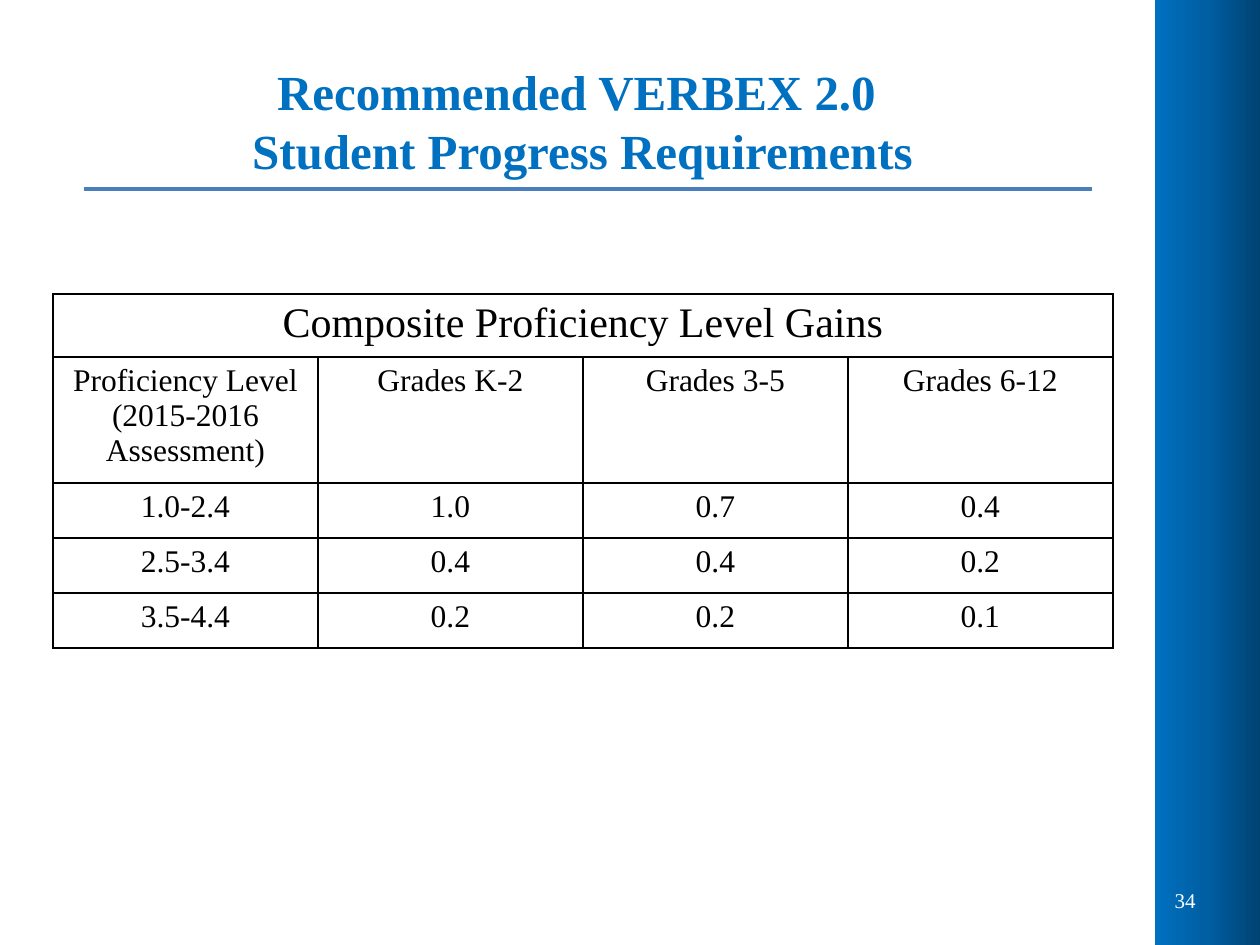
import copy

import pptx
import pptx.dml.color
import pptx.enum.shapes
import pptx.enum.text
import pptx.oxml
import pptx.oxml.ns
import pptx.util

PX = 914400 // 126  # EMU in one px
FONT = "Times New Roman"
BLUE = pptx.dml.color.RGBColor(0x00, 0x70, 0xC0)
MID_BLUE = pptx.dml.color.RGBColor(0x00, 0x5E, 0xA2)
DARK_BLUE = pptx.dml.color.RGBColor(0x00, 0x42, 0x72)
RULE_BLUE = pptx.dml.color.RGBColor(0x4B, 0x7E, 0xBC)
BLACK = pptx.dml.color.RGBColor(0, 0, 0)
WHITE = pptx.dml.color.RGBColor(255, 255, 255)
ALIGN = pptx.enum.text.PP_ALIGN
MIDDLE = pptx.enum.text.MSO_ANCHOR.MIDDLE

GAINS_TITLE = "Composite Proficiency Level Gains"
GAINS = [
    ["Proficiency Level (2015-2016 Assessment)", "Grades K-2", "Grades 3-5", "Grades 6-12"],
    ["1.0-2.4", "1.0", "0.7", "0.4"],
    ["2.5-3.4", "0.4", "0.4", "0.2"],
    ["3.5-4.4", "0.2", "0.2", "0.1"],
]
COLUMN_WIDTH = 265
ROW_HEIGHTS = [63, 126, 55, 55, 55]


def px(*lengths):
    return [pptx.util.Emu(length * PX) for length in lengths]


def add_run(paragraph, text, size, color, align, bold=False):
    paragraph.alignment = align
    run = paragraph.add_run()
    run.text = text
    run.font.name = FONT
    run.font.size = pptx.util.Pt(size)
    run.font.bold = bold
    run.font.color.rgb = color


def add_side_band(slide):
    band = slide.shapes.add_shape(
        pptx.enum.shapes.MSO_SHAPE.RECTANGLE, *px(1155, 0, 105, 945))
    band.shadow.inherit = False
    band.line.fill.background()
    band.fill.gradient()
    band.fill.gradient_angle = 0
    # The default gradient has two stops; a third goes between them
    stop_list = band.element.find(".//" + pptx.oxml.ns.qn("a:gsLst"))
    middle_stop = copy.deepcopy(stop_list[0])
    middle_stop.set("pos", "50000")
    stop_list.insert(1, middle_stop)
    for stop, color in zip(band.fill.gradient_stops, (BLUE, MID_BLUE, DARK_BLUE)):
        stop.color.rgb = color


def set_title(slide, lines):
    title = slide.shapes.title
    title.left, title.top, title.width, title.height = px(63, 42, 1039, 157)
    title.text_frame.vertical_anchor = MIDDLE
    heading = title.text_frame.paragraphs[0]
    for index, line in enumerate(lines):
        if index:
            heading.add_line_break()
        add_run(heading, line, 28, BLUE, ALIGN.CENTER, bold=True)


def add_page_number(slide, number):
    box = slide.shapes.add_textbox(*px(1155, 876, 53, 48))
    box.text_frame.word_wrap = True
    box.text_frame.vertical_anchor = MIDDLE
    add_run(box.text_frame.paragraphs[0], number, 12, WHITE, ALIGN.RIGHT)


def add_title_rule(slide):
    rule = slide.shapes.add_connector(
        pptx.enum.shapes.MSO_CONNECTOR.STRAIGHT, *px(84, 189, 1092, 189))
    rule.line.color.rgb = RULE_BLUE
    rule.line.width = pptx.util.Pt(2)
    rule.element.spPr.append(pptx.oxml.parse_xml(
        f'<a:effectLst {pptx.oxml.ns.nsdecls("a")}/>'))


def style_cell(cell):
    properties = cell._tc.get_or_add_tcPr()
    for side in ("lnL", "lnR", "lnT", "lnB"):
        properties.append(pptx.oxml.parse_xml(
            f'<a:{side} {pptx.oxml.ns.nsdecls("a")} w="12700">'
            f'<a:solidFill><a:srgbClr val="{BLACK}"/></a:solidFill></a:{side}>'))
    cell.fill.background()


def add_gains_table(slide):
    columns = len(GAINS[0])
    table = slide.shapes.add_table(
        len(ROW_HEIGHTS), columns,
        *px(53, 294, columns * COLUMN_WIDTH, sum(ROW_HEIGHTS))).table
    table.first_row = table.horz_banding = False
    for column in table.columns:
        column.width = px(COLUMN_WIDTH)[0]
    for row, height in zip(table.rows, ROW_HEIGHTS):
        row.height = px(height)[0]
    for cell in table.iter_cells():
        style_cell(cell)

    # Heading across all columns
    heading = table.cell(0, 0)
    heading.merge(table.cell(0, columns - 1))
    add_run(heading.text_frame.paragraphs[0], GAINS_TITLE, 24, BLACK, ALIGN.CENTER)

    # Column labels and gains
    for row_index, entries in enumerate(GAINS, start=1):
        for column_index, entry in enumerate(entries):
            cell = table.cell(row_index, column_index)
            add_run(cell.text_frame.paragraphs[0], entry, 18, BLACK, ALIGN.CENTER)


def main():
    deck = pptx.Presentation()
    deck.slide_width, deck.slide_height = px(1260, 945)
    slide = deck.slides.add_slide(deck.slide_layouts.get_by_name("Title Only"))
    add_side_band(slide)
    set_title(slide, ["Recommended VERBEX 2.0 ", "Student Progress Requirements"])
    add_page_number(slide, "34")
    add_title_rule(slide)
    add_gains_table(slide)
    deck.save("out.pptx")


if __name__ == "__main__":
    main()
